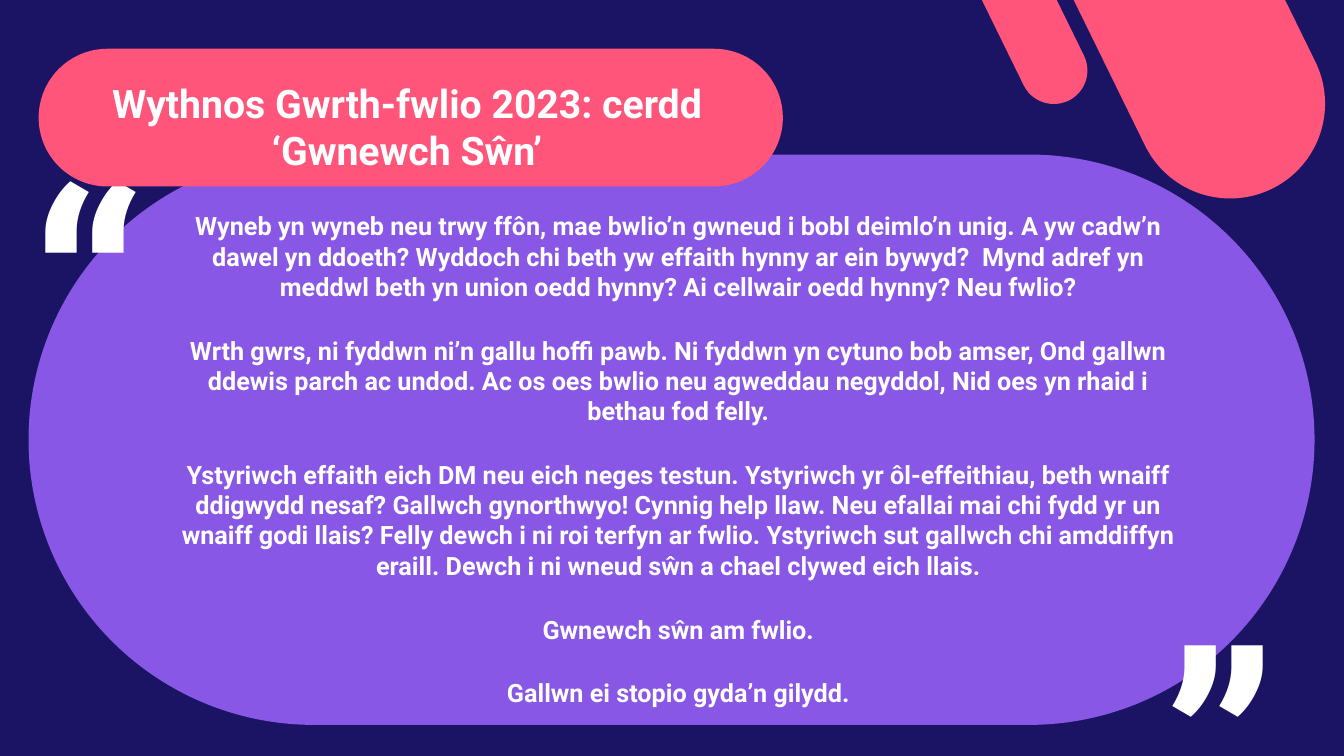
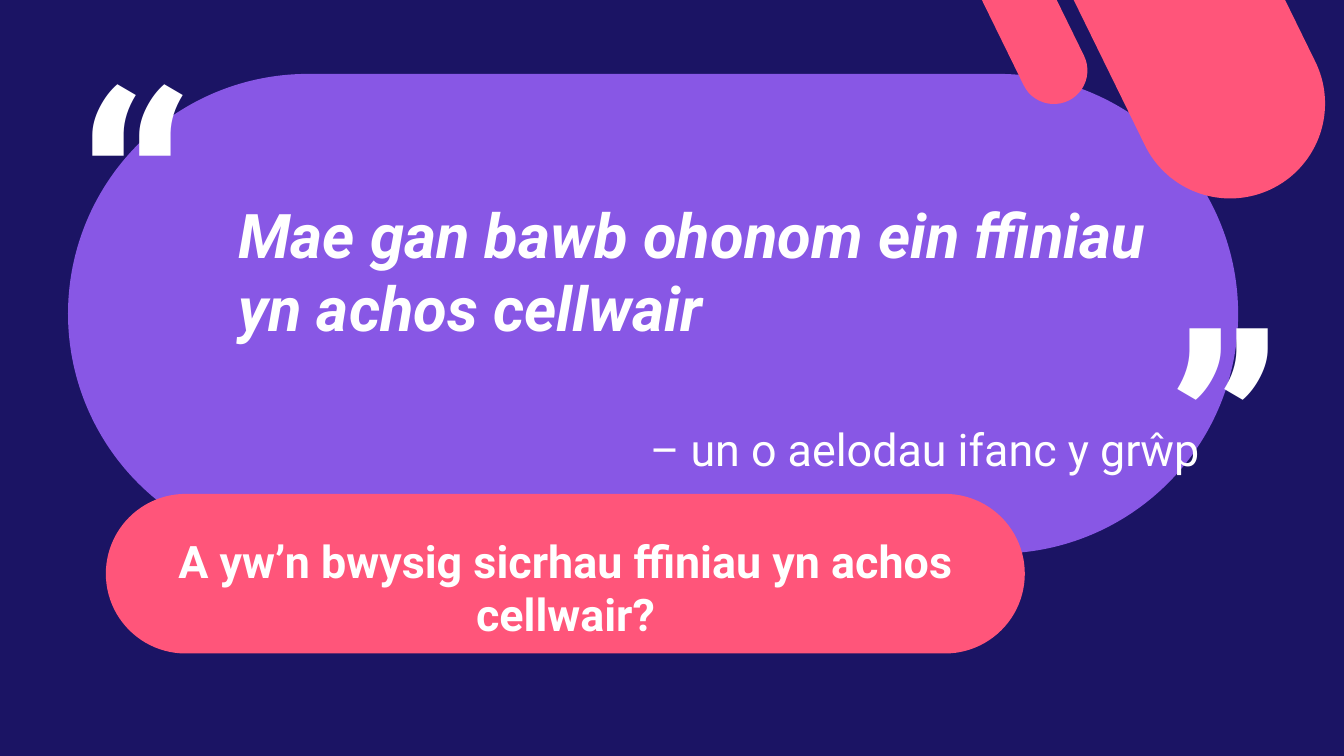
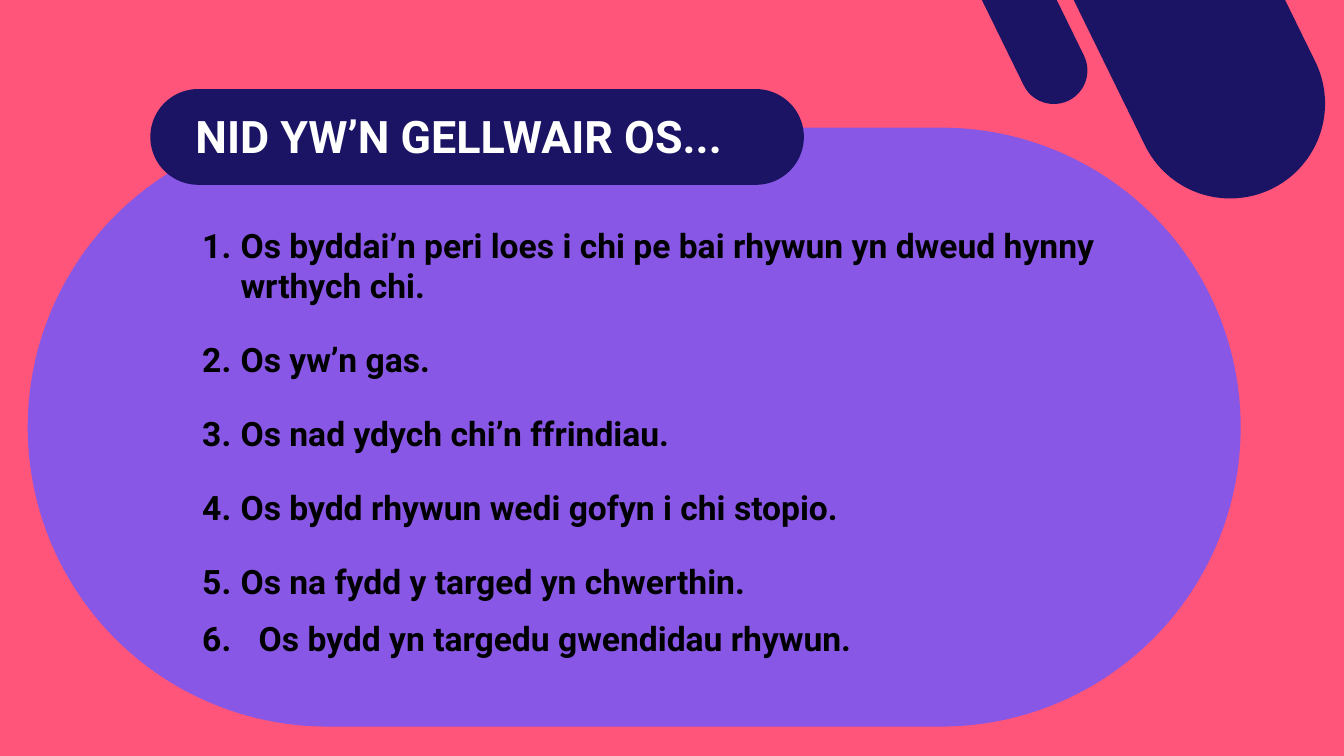
import pptx
import pptx.util
import pptx.dml.color
import pptx.enum.shapes
import pptx.enum.text
import lxml.etree

HUES = {"navy": "1B1464", "pink": "FF557A", "plum": "8857E5",
        "white": "FFFFFF", "black": "000000"}
FACE = "Roboto"
COLS, ROWS = 160, 90
ALIGN = pptx.enum.text.PP_ALIGN
Pt = pptx.util.Pt
RGB = pptx.dml.color.RGBColor.from_string

deck = pptx.Presentation()
deck.slide_width = pptx.util.Inches(13.33)
deck.slide_height = pptx.util.Inches(7.5)
COL = deck.slide_width / COLS
ROW = deck.slide_height / ROWS


def pill(page, box, hue, turn=0):
    """Draw a fully rounded bar; box is left, top, width, height in cells."""
    x, y, w, h = box
    bar = page.shapes.add_shape(
        pptx.enum.shapes.MSO_SHAPE.ROUNDED_RECTANGLE,
        int(x * COL), int(y * ROW), int(w * COL), int(h * ROW))
    bar.adjustments[0] = 0.5
    bar.rotation = turn
    bar.shadow.inherit = False
    bar.fill.solid()
    bar.fill.fore_color.rgb = RGB(HUES[hue])
    bar.line.fill.background()


def write(page, box, lines, size, hue="white", bold=True, slant=False,
          align=ALIGN.LEFT, gap=0, turn=0, hang=()):
    """Add a text box; hang holds one number indent in inches per line."""
    x, y, w, h = box
    note = page.shapes.add_textbox(
        int(x * COL), int(y * ROW), int(w * COL), int(h * ROW))
    note.rotation = turn
    frame = note.text_frame
    frame.word_wrap = True
    frame.text = "\n".join(lines)
    for i, para in enumerate(frame.paragraphs):
        para.alignment = align
        para.space_before = para.space_after = Pt(gap)
        if hang:
            props = para._p.get_or_add_pPr()
            inset = pptx.util.Inches(hang[i])
            props.set("marL", str(inset))
            props.set("indent", str(-inset))
            mark = lxml.etree.SubElement(
                props, pptx.oxml.ns.qn("a:buAutoNum"))
            mark.set("type", "arabicPeriod")
        font = para.font
        font.name, font.size = FACE, Pt(size)
        font.bold, font.italic = bold, slant
        font.color.rgb = RGB(HUES[hue])
    return note


poem = [
    "Wyneb yn wyneb neu trwy ffôn, mae bwlio’n gwneud i bobl deimlo’n unig. "
    "A yw cadw’n dawel yn ddoeth? Wyddoch chi beth yw effaith hynny ar ein "
    "bywyd?  Mynd adref yn meddwl beth yn union oedd hynny? Ai cellwair oedd "
    "hynny? Neu fwlio?",
    "Wrth gwrs, ni fyddwn ni’n gallu hoffi pawb. Ni fyddwn yn cytuno bob "
    "amser, Ond gallwn ddewis parch ac undod. Ac os oes bwlio neu agweddau "
    "negyddol, Nid oes yn rhaid i bethau fod felly.",
    "Ystyriwch effaith eich DM neu eich neges testun. Ystyriwch yr "
    "ôl-effeithiau, beth wnaiff ddigwydd nesaf? Gallwch gynorthwyo! Cynnig "
    "help llaw. Neu efallai mai chi fydd yr un wnaiff godi llais? Felly "
    "dewch i ni roi terfyn ar fwlio. Ystyriwch sut gallwch chi amddiffyn "
    "eraill. Dewch i ni wneud sŵn a chael clywed eich llais.",
    "Gwnewch sŵn am fwlio.",
    "Gallwn ei stopio gyda’n gilydd.",
]
rules = [
    "Os byddai’n peri loes i chi pe bai rhywun yn dweud hynny wrthych chi.",
    "Os yw’n gas.",
    "Os nad ydych chi’n ffrindiau.",
    "Os bydd rhywun wedi gofyn i chi stopio.",
    "Os na fydd y targed yn chwerthin.",
    "Os bydd yn targedu gwendidau rhywun.",
]

# Each page: ground, accent, panel, quote marks, label bar, label text
plans = [
    {"ground": "navy", "tint": "pink", "panel": (3.4, 18.4, 153.1, 67.9),
     "marks": [(2.5, 13.3, 0), (130.8, 52.1, 180)],
     "bar": (4.6, 5.8, 88.6, 16.4), "spot": (4.6, 8.8, 87.7, 12.5),
     "label": "Wythnos Gwrth-fwlio 2023: cerdd ‘Gwnewch Sŵn’", "size": 28},
    {"ground": "navy", "tint": "pink", "panel": (8.1, 8.8, 139.3, 57.1),
     "marks": [(8, 1.7, 0), (131.4, 14.4, 180)],
     "bar": (12.6, 58.8, 109.4, 19), "spot": (16.1, 62.9, 102.5, 14.2),
     "label": "A yw’n bwysig sicrhau ffiniau yn achos cellwair?", "size": 32},
    {"ground": "pink", "tint": "navy", "panel": (3.3, 15.2, 144.4, 71.3),
     "marks": [],
     "bar": (17.9, 10.6, 77.8, 11.4), "spot": (0.4, 12.4, 108.5, 7.7),
     "label": "NID YW’N GELLWAIR OS...", "size": 32},
]

pages = []
for plan in plans:
    page = deck.slides.add_slide(deck.slide_layouts[6])
    back = page.background.fill
    back.solid()
    back.fore_color.rgb = RGB(HUES[plan["ground"]])
    pill(page, plan["panel"], "plum")
    for box in ((126.6, -35.8, 22.6, 61.4), (113.2, -31.2, 8, 45.5)):
        pill(page, box, plan["tint"], 153.9)
    for x, y, turn in plan["marks"]:
        write(page, (x, y, 22.6, 41.6), ["“"], 200, turn=turn)
    pill(page, plan["bar"], plan["tint"])
    write(page, plan["spot"], [plan["label"]], plan["size"],
          align=ALIGN.CENTER)
    pages.append(page)

verse, quote, checks = pages
write(verse, (19.3, 24.5, 122.9, 61), poem, 18, align=ALIGN.CENTER, gap=12)
write(quote, (27.2, 22.8, 116.8, 19),
      ["Mae gan bawb ohonom ein ffiniau yn achos cellwair"], 44,
      slant=True, gap=12)
write(quote, (76.2, 49.6, 80, 7.7), ["– un o aelodau ifanc y grŵp"], 32,
      bold=False)
steps = write(checks, (22.9, 26.2, 111.1, 53.3), rules, 24, hue="black",
              gap=12, hang=[0.38] * 5 + [0.56])
last = steps.text_frame.paragraphs[-1]
last.space_before = last.space_after = Pt(0)

deck.save("out.pptx")
